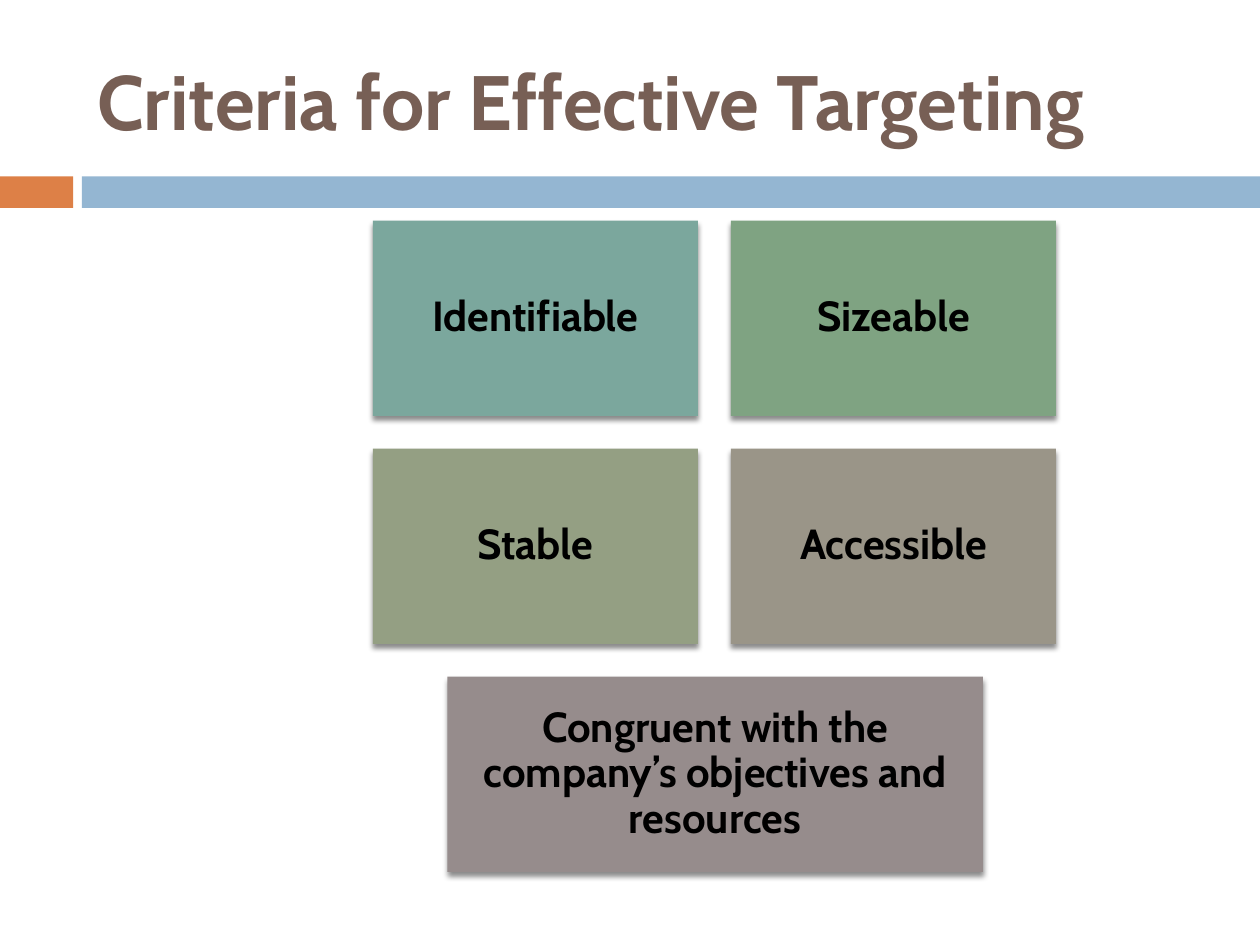
from dataclasses import dataclass

from lxml import etree
from pptx import Presentation
from pptx.dml.color import RGBColor
from pptx.enum.shapes import MSO_SHAPE
from pptx.enum.text import MSO_ANCHOR, PP_ALIGN
from pptx.oxml.ns import qn
from pptx.util import Pt

RECT = MSO_SHAPE.RECTANGLE
MIDDLE = MSO_ANCHOR.MIDDLE
LEFT, CENTER = PP_ALIGN.LEFT, PP_ALIGN.CENTER

PX = 9144  # EMU per px, at 100 px to the inch
FONT = "Cabin"

BLACK = RGBColor(0x00, 0x00, 0x00)
BROWN = RGBColor(0x77, 0x5F, 0x55)
ORANGE = RGBColor(0xDD, 0x80, 0x47)
BLUE = RGBColor(0x94, 0xB6, 0xD2)
TEAL = RGBColor(0x7B, 0xA7, 0x9D)
GREEN = RGBColor(0x7F, 0xA3, 0x82)
OLIVE = RGBColor(0x94, 0x9F, 0x83)
TAUPE = RGBColor(0x9A, 0x95, 0x88)
MAUVE = RGBColor(0x96, 0x8C, 0x8C)

# Card grid
GRID_X, GRID_Y = 296, 175
CARD_W, CARD_H, GAP = 258, 155, 26
WIDE_W = 425


@dataclass
class Card:
    text: str
    fill: RGBColor
    width: int = CARD_W


ROWS = [
    [Card("Identifiable", TEAL), Card("Sizeable", GREEN)],
    [Card("Stable", OLIVE), Card("Accessible", TAUPE)],
    [Card("Congruent with the company’s objectives and resources", MAUVE, WIDE_W)],
]


def write(s, text: str, *, size: int, color: RGBColor, align=LEFT,
          inset: int = 10, spacing: float = 1.0) -> None:
    tf = s.text_frame
    tf.word_wrap = True
    tf.vertical_anchor = MIDDLE
    tf.margin_left = tf.margin_right = inset * PX
    tf.margin_top = tf.margin_bottom = inset * PX
    p = tf.paragraphs[0]
    p.alignment = align
    p.line_spacing = spacing
    r = p.add_run()
    r.text = text
    r.font.name = FONT
    r.font.size = Pt(size)
    r.font.bold = True
    r.font.color.rgb = color


def add_rect(slide, x: int, y: int, w: int, h: int, fill: RGBColor):
    s = slide.shapes.add_shape(RECT, x * PX, y * PX, w * PX, h * PX)
    s.shadow.inherit = False
    s.fill.solid()
    s.fill.fore_color.rgb = fill
    s.line.fill.background()
    return s


def add_shadow(s) -> None:
    effects = s.element.spPr.find(qn("a:effectLst"))
    shadow = etree.SubElement(effects, qn("a:outerShdw"), blurRad=str(Pt(3)),
                              dist=str(Pt(2.4)), dir="5400000", rotWithShape="0")
    color = etree.SubElement(shadow, qn("a:srgbClr"), val="000000")
    etree.SubElement(color, qn("a:alpha"), val="45000")


def add_card(slide, card: Card, x: int, y: int) -> None:
    s = add_rect(slide, x, y, card.width, CARD_H, card.fill)
    add_shadow(s)
    write(s, card.text, size=24, color=BLACK, align=CENTER, spacing=0.9)


def main() -> None:
    prs = Presentation()
    prs.slide_width, prs.slide_height = 1000 * PX, 750 * PX
    slide = prs.slides.add_slide(prs.slide_layouts[5])

    # Band under the title
    add_rect(slide, 0, 140, 58, 25, ORANGE)
    add_rect(slide, 65, 140, 935, 25, BLUE)

    # Title
    title = slide.shapes.title
    title.left, title.top = 67 * PX, 25 * PX
    title.width, title.height = 892 * PX, 108 * PX
    write(title, "Criteria for Effective Targeting", size=44, color=BROWN)

    # Criteria, each row centred on the grid
    center = GRID_X + CARD_W + GAP // 2
    for i, row in enumerate(ROWS):
        x = center - (sum(c.width for c in row) + GAP * (len(row) - 1)) // 2
        for card in row:
            add_card(slide, card, x, GRID_Y + i * (CARD_H + GAP))
            x += card.width + GAP

    prs.save("out.pptx")


if __name__ == "__main__":
    main()
